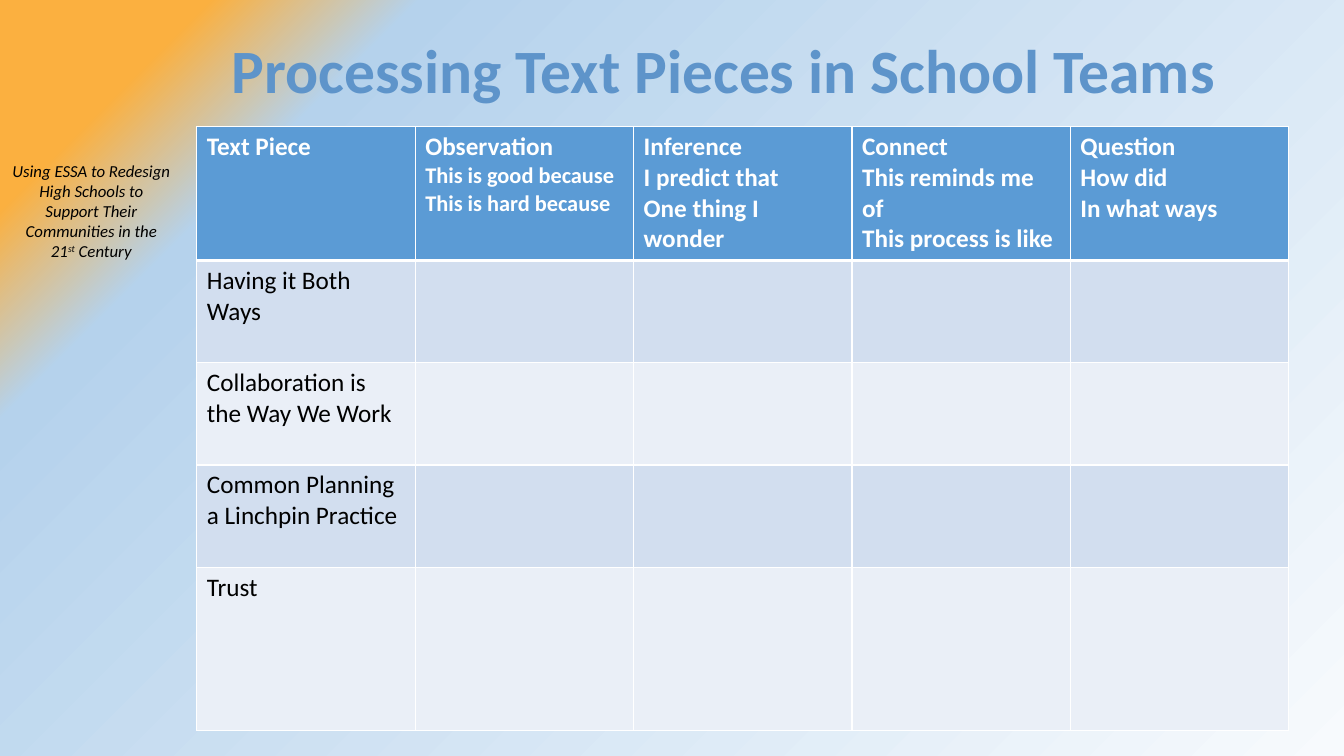
from lxml import etree
from pptx import Presentation
from pptx.dml.color import RGBColor as RGB
from pptx.enum.text import MSO_ANCHOR as ANCHOR, PP_ALIGN as ALIGN
from pptx.oxml import parse_xml
from pptx.oxml.ns import nsdecls, qn
from pptx.util import Pt

COLORS = {
    "title": "5E94CA",
    "text": "000000",
    "white": "FFFFFF",
    "header": "5B9BD5",
    "band_dark": "D2DEEF",
    "band_light": "EAEFF7",
    "bg_pale": "F7FAFD",
    "bg_blue": "B5D2EC",
    "bg_orange": "FBB040",
}
FONT = "Calibri"
BG_STOPS = [(0, "bg_pale", 100), (80, "bg_blue", 50),
            (90, "bg_orange", 55), (100, "bg_orange", 100)]
HEADERS = [
    [("Text Piece", 18)],
    [("Observation", 18), ("This is good because", 16), ("This is hard because", 16)],
    [("Inference", 18), ("I predict that", 18), ("One thing I wonder", 18)],
    [("Connect", 18), ("This reminds me of", 18), ("This process is like", 18)],
    [("Question", 18), ("How did", 18), ("In what ways", 18)],
]
TEXT_PIECES = ["Having it Both Ways", "Collaboration is the Way We Work",
               "Common Planning a Linchpin Practice", "Trust"]
ROW_HEIGHTS = [95.7, 73, 73, 73, 117]


def add_run(p, text, size, color, bold=False, italic=False):
    r = p.add_run()
    r.text = text
    f = r.font
    f.name, f.size, f.bold, f.italic = FONT, Pt(size), bold, italic
    f.color.rgb = RGB.from_string(COLORS[color])
    return r


def add_text_frame(s, left, top, width, height):
    tf = s.shapes.add_textbox(Pt(left), Pt(top), Pt(width), Pt(height)).text_frame
    tf.word_wrap = True
    return tf


def paint_background(s):
    s.background.fill.solid()
    bg = s.element.find(".//" + qn("p:bgPr"))
    stops = "".join(
        f'<a:gs pos="{pos * 1000}"><a:srgbClr val="{COLORS[name]}">'
        f'<a:alpha val="{alpha * 1000}"/></a:srgbClr></a:gs>'
        for pos, name, alpha in BG_STOPS)
    bg.replace(bg[0], parse_xml(
        f'<a:gradFill {nsdecls("a")} rotWithShape="1"><a:gsLst>{stops}</a:gsLst>'
        '<a:path path="circle"><a:fillToRect l="100000" t="100000"/></a:path>'
        '<a:tileRect r="-100000" b="-100000"/></a:gradFill>'))


def add_side_note(s, left, top, width, height):
    p = add_text_frame(s, left, top, width, height).paragraphs[0]
    p.alignment = ALIGN.CENTER
    add_run(p, "Using ESSA to Redesign High Schools to Support Their "
               "Communities in the 21", 12, "text", italic=True)
    r = add_run(p, "st", 12, "text", italic=True)
    r.font._element.set("baseline", "30000")
    add_run(p, " Century", 12, "text", italic=True)


def add_title(s, left, top, width, height):
    tf = add_text_frame(s, left, top, width, height)
    tf.vertical_anchor = ANCHOR.MIDDLE
    p = tf.paragraphs[0]
    p.line_spacing = 0.9
    add_run(p, "Processing Text Pieces in School Teams", 44, "title", bold=True)


def style_cell(cell, fill, bottom, top):
    cell.fill.solid()
    cell.fill.fore_color.rgb = RGB.from_string(COLORS[fill])
    tc_pr = cell._tc.get_or_add_tcPr()
    for i, (side, width) in enumerate((("L", 1), ("R", 1), ("T", top), ("B", bottom))):
        ln = etree.Element(qn("a:ln" + side), w=str(Pt(width)))
        solid = etree.SubElement(ln, qn("a:solidFill"))
        etree.SubElement(solid, qn("a:srgbClr"), val=COLORS["white"])
        tc_pr.insert(i, ln)


def add_protocol_table(s, left, top, width, row_heights):
    n_cols = len(HEADERS)
    table = s.shapes.add_table(len(row_heights), n_cols, Pt(left), Pt(top),
                               Pt(width), Pt(sum(row_heights))).table
    for col in table.columns:
        col.width = Pt(width / n_cols)
    for i, height in enumerate(row_heights):
        table.rows[i].height = Pt(height)
        fill = "header" if i == 0 else "band_dark" if i % 2 else "band_light"
        for j in range(n_cols):
            style_cell(table.cell(i, j), fill, 3 if i == 0 else 1, 3 if i == 1 else 1)
    for j, lines in enumerate(HEADERS):
        tf = table.cell(0, j).text_frame
        for k, (text, size) in enumerate(lines):
            p = tf.add_paragraph() if k else tf.paragraphs[0]
            add_run(p, text, size, "white", bold=True)
    for i, text in enumerate(TEXT_PIECES, 1):
        add_run(table.cell(i, 0).text_frame.paragraphs[0], text, 18, "text")


def main():
    prs = Presentation()
    prs.slide_width, prs.slide_height = Pt(960), Pt(540)
    s = prs.slides.add_slide(prs.slide_layouts[6])
    paint_background(s)
    add_side_note(s, 1.5, 111, 127.5, 80)
    add_title(s, 158.4, 0, 780, 104.4)
    add_protocol_table(s, 140.6, 90.4, 780, ROW_HEIGHTS)
    prs.save("out.pptx")


if __name__ == "__main__":
    main()
